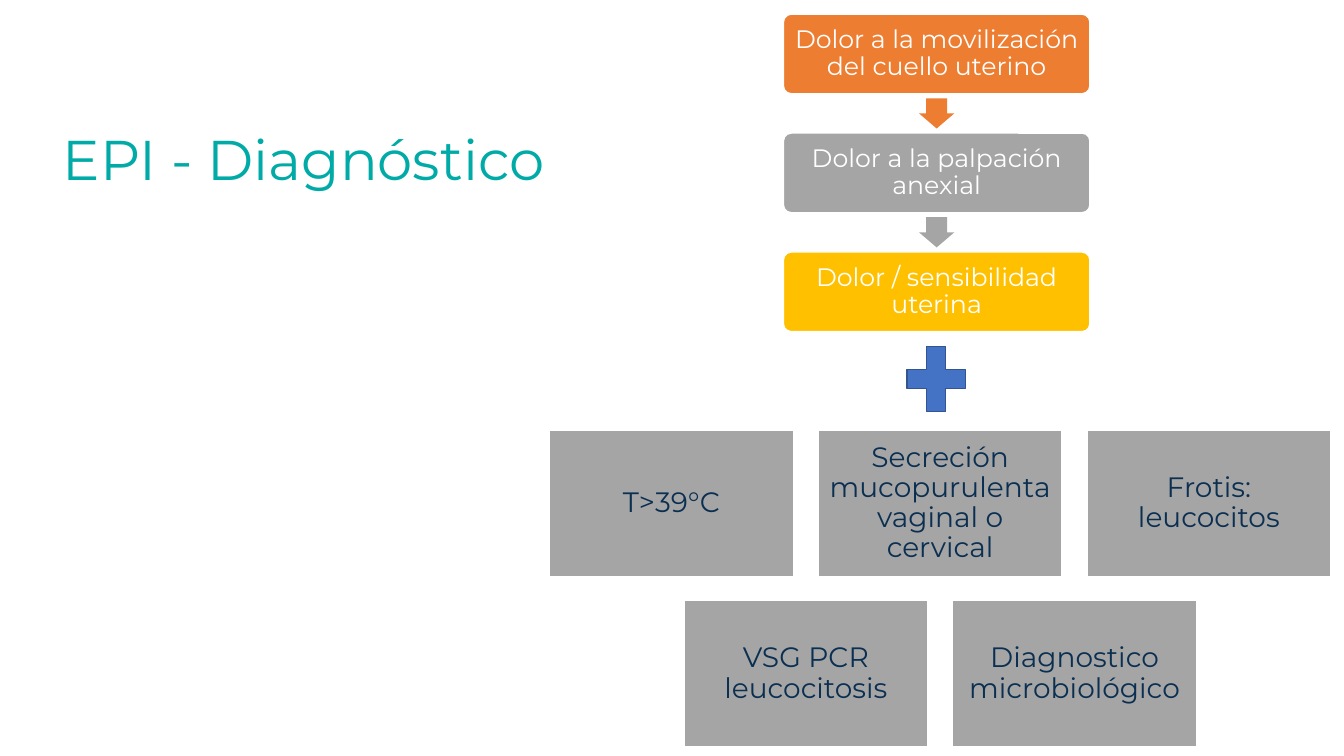
from pptx import Presentation
from pptx.dml.color import RGBColor
from pptx.enum.shapes import MSO_SHAPE
from pptx.enum.text import MSO_ANCHOR, PP_ALIGN
from pptx.util import Inches, Pt


def paint(color, code):
    color.rgb = RGBColor.from_string(code)


def write(shape, text, size, color, inset=0.1):
    frame = shape.text_frame
    frame.word_wrap = True
    frame.vertical_anchor = MSO_ANCHOR.MIDDLE
    frame.margin_left = frame.margin_right = Inches(inset)
    frame.margin_top = frame.margin_bottom = Inches(inset)
    para = frame.paragraphs[0]
    para.text = text
    para.alignment = PP_ALIGN.CENTER
    para.line_spacing = 0.9
    for run in para.runs:
        run.font.name = "Montserrat"
        run.font.size = Pt(size)
        paint(run.font.color, color)


def draw(slide, kind, box, fill, line=None, adjust=()):
    shape = slide.shapes.add_shape(kind, *map(Inches, box))
    shape.shadow.inherit = False
    shape.fill.solid()
    paint(shape.fill.fore_color, fill)
    if line:
        paint(shape.line.color, line)
        shape.line.width = Pt(1)
    else:
        shape.line.fill.background()
    for index, value in enumerate(adjust):
        shape.adjustments[index] = value
    return shape


def add_title(slide, text, box):
    title = slide.shapes.title
    title.left, title.top, title.width, title.height = map(Inches, box)
    write(title, text, 40, "00AAA7")


def add_flow(slide, steps, box):
    left, top, width, height = box
    tall, wide, long = 0.79, 0.35, 0.3
    pitch = (height - tall) / (len(steps) - 1)
    for index, (text, fill) in enumerate(steps):
        y = top + index * pitch
        step = draw(slide, MSO_SHAPE.ROUNDED_RECTANGLE,
                    (left, y, width, tall), fill, "FFFFFF", (0.1,))
        write(step, text, 18, "FFFFFF", 0.09)
        if index < len(steps) - 1:
            spot = (left + (width - wide) / 2,
                    y + (tall + pitch - long) / 2, wide, long)
            draw(slide, MSO_SHAPE.DOWN_ARROW, spot, fill, adjust=(0.6, 0.5))


def add_grid(slide, rows, box):
    left, top, width, height = box
    wide, tall = 2.42, 1.45
    across = (width - wide) / (max(map(len, rows)) - 1)
    down = (height - tall) / (len(rows) - 1)
    for line, row in enumerate(rows):
        start = left + (width - wide - across * (len(row) - 1)) / 2
        for place, text in enumerate(row):
            spot = (start + place * across, top + line * down, wide, tall)
            card = draw(slide, MSO_SHAPE.RECTANGLE, spot, "A5A5A5", "FFFFFF")
            write(card, text, 20, "0B2F51", 0.08)


def main():
    deck = Presentation()
    deck.slide_width, deck.slide_height = Inches(13.33), Inches(7.5)
    slide = deck.slides.add_slide(deck.slide_layouts[5])
    add_flow(slide, [
        ("Dolor a la movilización del cuello uterino", "ED7D31"),
        ("Dolor a la palpación anexial", "A5A5A5"),
        ("Dolor / sensibilidad uterina", "FFC000"),
    ], (7.77, 0.14, 3.04, 3.15))
    add_grid(slide, [
        ["T>39°C", "Secreción mucopurulenta vaginal o cervical",
         "Frotis:\nleucocitos"],
        ["VSG PCR leucocitosis", "Diagnostico microbiológico"],
    ], (5.45, 4.27, 7.75, 3.14))
    draw(slide, MSO_SHAPE.MATH_PLUS, (8.89, 3.32, 0.79, 0.88),
         "4472C4", "325491")
    add_title(slide, "EPI - Diagnóstico", (0.24, 0.6, 5.54, 2.02))
    deck.save("out.pptx")


if __name__ == "__main__":
    main()
